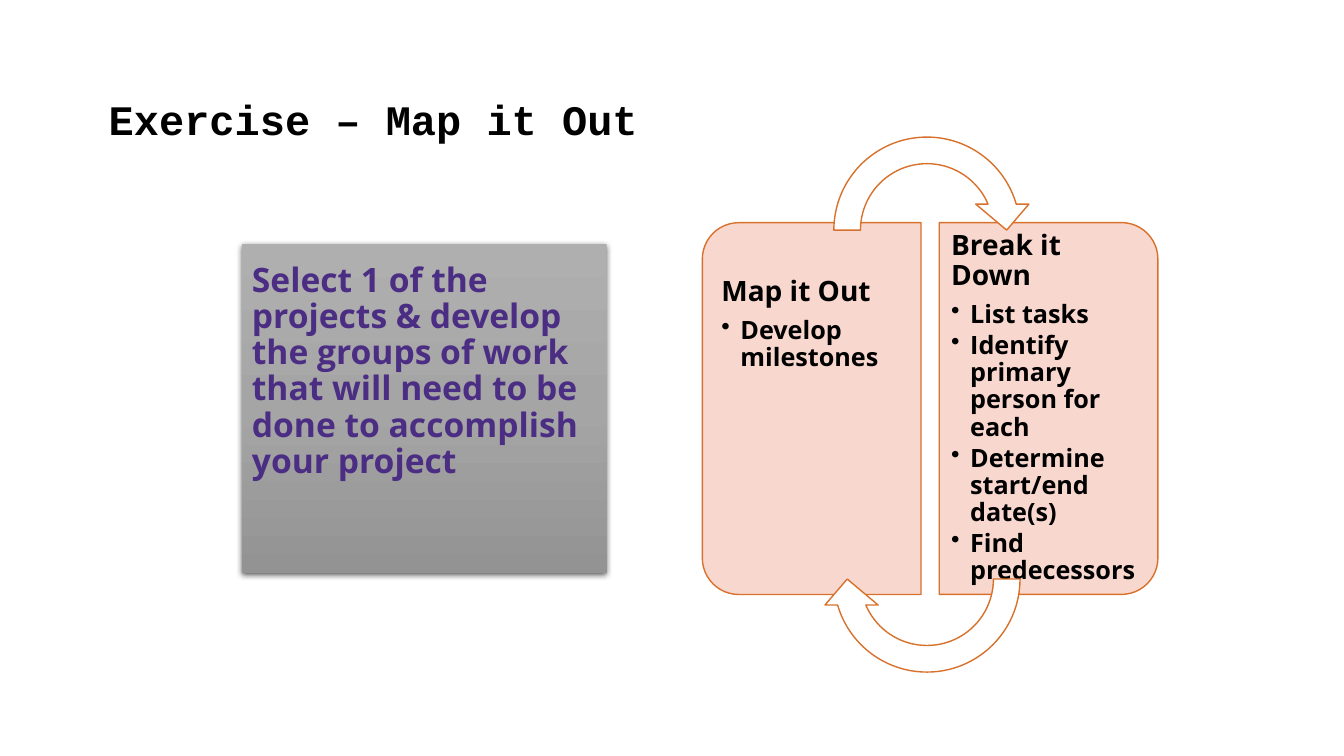
from copy import deepcopy

from lxml.etree import SubElement
from pptx import Presentation
from pptx.dml.color import RGBColor
from pptx.enum.shapes import MSO_SHAPE as Shape
from pptx.enum.text import MSO_ANCHOR as Anchor
from pptx.oxml.ns import qn
from pptx.util import Cm, Pt

COLORS = {
    "text": "000000",
    "prompt": "4B2E83",
    "panel": "F8D7CE",
    "outline": "D7712C",
    "arrow": "FFFFFF",
    "shadow": "000000",
}
PROMPT_GRADIENT = [(0, "AFAFAF"), (0.5, "A5A5A5"), (1, "939393")]
BODY_FONT = "Open Sans"
TITLE_FONT = "Courier New"


def rgb(name):
    return RGBColor.from_string(COLORS[name])


def set_frame(frame, anchor, left=0.25, top=0.13, right=0.25, bottom=0.13):
    frame.word_wrap = True
    frame.vertical_anchor = anchor
    frame.margin_left, frame.margin_top = Cm(left), Cm(top)
    frame.margin_right, frame.margin_bottom = Cm(right), Cm(bottom)


def style_paragraph(paragraph, text, size, font=BODY_FONT, color="text", after=0):
    paragraph.text = text
    paragraph.line_spacing = 0.9
    paragraph.space_after = Pt(after)
    paragraph.font.name = font
    paragraph.font.size = Pt(size)
    paragraph.font.bold = True
    paragraph.font.color.rgb = rgb(color)


def add_bullet(paragraph):
    properties = paragraph._p.get_or_add_pPr()
    properties.set("marL", str(Cm(0.48)))
    properties.set("indent", str(-Cm(0.48)))
    SubElement(properties, qn("a:buChar"), char="•")


def add_title(slide, text):
    title = slide.shapes.add_textbox(Cm(2.49), Cm(1.04), Cm(30.3), Cm(2.74))
    set_frame(title.text_frame, Anchor.BOTTOM)
    style_paragraph(title.text_frame.paragraphs[0], text, 30, TITLE_FONT)


def fill_gradient(shape, stops):
    shape.fill.gradient()
    shape.fill.gradient_angle = 270
    first_stop = shape.fill.gradient_stops[0]._gs
    first_stop.addnext(deepcopy(first_stop))
    for stop, (position, color) in zip(shape.fill.gradient_stops, stops):
        stop.position = position
        stop.color.rgb = RGBColor.from_string(color)


def add_shadow(shape):
    shape.shadow.inherit = False
    effects = shape._element.spPr.find(qn("a:effectLst"))
    shadow = SubElement(
        effects, qn("a:outerShdw"), blurRad=str(Pt(4.5)), dist=str(Pt(1.5)),
        dir="5400000", algn="ctr", rotWithShape="0",
    )
    color = SubElement(shadow, qn("a:srgbClr"), val=COLORS["shadow"])
    SubElement(color, qn("a:alpha"), val="63000")


def add_prompt(slide, text):
    prompt = slide.shapes.add_shape(
        Shape.RECTANGLE, Cm(6.1), Cm(6.15), Cm(9.19), Cm(8.28))
    fill_gradient(prompt, PROMPT_GRADIENT)
    prompt.line.fill.background()
    add_shadow(prompt)
    set_frame(prompt.text_frame, Anchor.TOP, top=0.48)
    paragraph = prompt.text_frame.paragraphs[0]
    style_paragraph(paragraph, text, 24, color="prompt")
    paragraph.alignment = 1


def add_outlined(slide, kind, left, top, width, height, fill, rotation):
    shape = slide.shapes.add_shape(kind, Cm(left), Cm(top), Cm(width), Cm(height))
    shape.shadow.inherit = False
    shape.rotation = rotation
    shape.fill.solid()
    shape.fill.fore_color.rgb = rgb(fill)
    shape.line.color.rgb = rgb("outline")
    shape.line.width = Pt(1)


def add_panel(slide, left, rotation):
    add_outlined(slide, Shape.ROUND_2_SAME_RECTANGLE, left, 7.54, 9.37, 5.51,
                 "panel", rotation)


def add_arrow(slide, top, rotation):
    add_outlined(slide, Shape.CIRCULAR_ARROW, 20.68, top, 5.36, 5.36,
                 "arrow", rotation)


def add_panel_text(slide, left, heading, bullets, anchor, margins):
    box = slide.shapes.add_textbox(Cm(left), Cm(5.87), Cm(5.23), Cm(8.84))
    frame = box.text_frame
    set_frame(frame, anchor, *margins)
    style_paragraph(frame.paragraphs[0], heading, 20, after=7)
    for text in bullets:
        paragraph = frame.add_paragraph()
        paragraph.line_spacing = 0.9
        paragraph.space_after = Pt(2.7)
        add_bullet(paragraph)
        style_paragraph(paragraph, text, 18, after=2.7)


def main():
    presentation = Presentation()
    presentation.slide_width, presentation.slide_height = Cm(33.87), Cm(19.05)
    slide = presentation.slides.add_slide(presentation.slide_layouts[6])

    add_prompt(slide, "Select 1 of the projects & develop the groups of work "
                      "that will need to be done to accomplish your project")
    add_title(slide, "Exercise – Map it Out")

    add_panel(slide, 15.77, 270)
    add_panel_text(slide, 17.98, "Map it Out", ["Develop milestones"],
                   Anchor.TOP, (0.2, 1.12, 0.3, 0.36))
    add_panel(slide, 21.74, 90)
    add_panel_text(
        slide, 23.67, "Break it Down",
        ["List tasks", "Identify primary person for each",
         "Determine start/end date(s)", "Find predecessors"],
        Anchor.MIDDLE, (0.3, 0.36, 0.2, 0.36))

    add_arrow(slide, 3.12, 0)
    add_arrow(slide, 11.91, 180)
    presentation.save("out.pptx")


if __name__ == "__main__":
    main()
